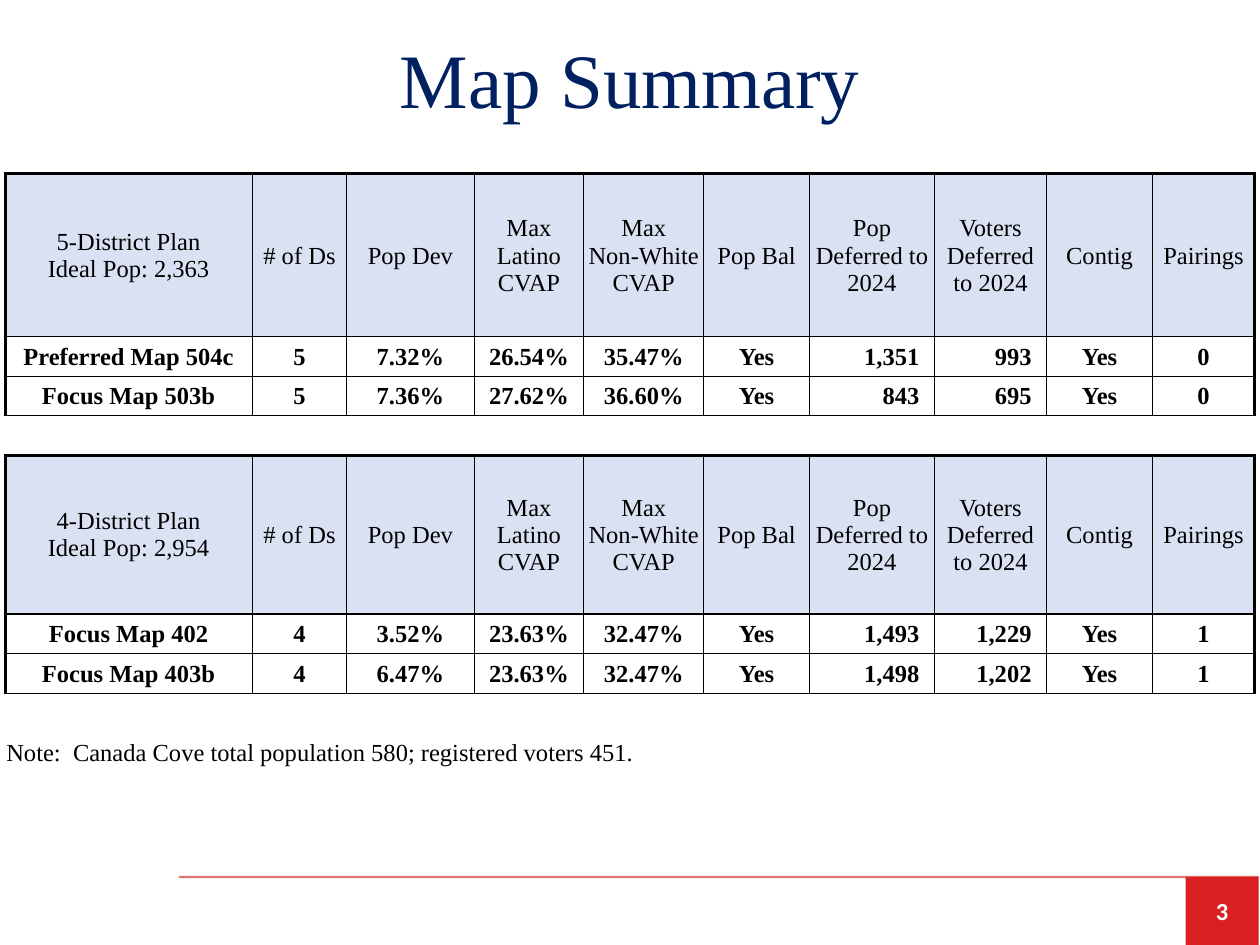
from lxml import etree
from pptx import Presentation
from pptx.dml.color import RGBColor
from pptx.enum.shapes import MSO_CONNECTOR, MSO_SHAPE
from pptx.enum.text import MSO_ANCHOR as Anchor, PP_ALIGN as Align
from pptx.oxml import parse_xml
from pptx.oxml.ns import nsdecls, qn
from pptx.util import Inches, Pt

WIDTH, HEIGHT = 10, 7.5
SERIF = "Times New Roman"
BLACK, NAVY, WHITE = "000000", "002060", "FFFFFF"
HEADER_FILL, BADGE_RED, RULE_RED = "D9E1F2", "D92121", "C80000"
THIN, MEDIUM, THICK = 0.5, 1, 2

COLUMNS = [1.96, 0.75, 1.01, 0.87, 0.95, 0.84, 0.99, 0.89, 0.84, 0.81]
NUMBER_COLUMNS = (6, 7)
HEADINGS = ["# of Ds", "Pop Dev", "Max\vLatino\vCVAP", "Max\vNon-White\vCVAP",
            "Pop Bal", "Pop\vDeferred to 2024", "Voters\vDeferred\vto 2024",
            "Contig", "Pairings"]
# Each plan: corner label, heading height, maps
PLANS = [
    ("5-District Plan\vIdeal Pop: 2,363", 1.29, [
        ["Preferred Map 504c", "5", "7.32%", "26.54%", "35.47%", "Yes",
         "1,351", "993", "Yes", "0"],
        ["Focus Map 503b", "5", "7.36%", "27.62%", "36.60%", "Yes",
         "843", "695", "Yes", "0"]]),
    ("4-District Plan\vIdeal Pop: 2,954", 1.26, [
        ["Focus Map 402", "4", "3.52%", "23.63%", "32.47%", "Yes",
         "1,493", "1,229", "Yes", "1"],
        ["Focus Map 403b", "4", "6.47%", "23.63%", "32.47%", "Yes",
         "1,498", "1,202", "Yes", "1"]]),
]
NOTE = "Note:  Canada Cove total population 580; registered voters 451."


def color(value):
    return RGBColor.from_string(value)


def style(paragraph, size, font_color, name=SERIF, bold=False, align=Align.CENTER):
    paragraph.alignment = align
    font = paragraph.font
    font.name, font.size, font.bold = name, Pt(size), bold
    font.color.rgb = color(font_color)


def set_borders(cell, left=0, right=0, top=0, bottom=0):
    """Draw the four sides of a cell; a width of zero hides the side."""
    properties = cell._tc.get_or_add_tcPr()
    for index, (side, width) in enumerate(zip("LRTB", (left, right, top, bottom))):
        paint = (f'<a:solidFill><a:srgbClr val="{BLACK}"/></a:solidFill>'
                 if width else "<a:noFill/>")
        properties.insert(index, parse_xml(
            f'<a:ln{side} {nsdecls("a")} w="{Pt(width)}">{paint}</a:ln{side}>'))


def fill_cell(cell, text="", fill=None, bold=False, align=Align.CENTER, right=0.01):
    cell.text = text
    cell.vertical_anchor = Anchor.MIDDLE
    cell.margin_left = cell.margin_top = Inches(0.01)
    cell.margin_right, cell.margin_bottom = Inches(right), 0
    style(cell.text_frame.paragraphs[0], 14, BLACK, bold=bold, align=align)
    if fill:
        cell.fill.solid()
        cell.fill.fore_color.rgb = color(fill)
    else:
        cell.fill.background()


def add_title(slide, left, top, width, height):
    box = slide.shapes.add_textbox(*map(Inches, (left, top, width, height)))
    frame = box.text_frame
    frame.word_wrap = True
    frame.vertical_anchor = Anchor.MIDDLE
    frame.text = "Map Summary"
    style(frame.paragraphs[0], 44, NAVY)


def add_plan(table, first_row, label, maps):
    """Fill a heading row, its map rows and the empty row below."""
    last = len(COLUMNS) - 1
    for offset, values in enumerate([[label] + HEADINGS] + maps):
        heading = offset == 0
        for column, value in enumerate(values):
            cell = table.cell(first_row + offset, column)
            number = column in NUMBER_COLUMNS and not heading
            fill_cell(cell, value, HEADER_FILL if heading else None, not heading,
                      Align.RIGHT if number else Align.CENTER,
                      0.12 if number else 0.01)
            set_borders(cell,
                        left=THICK if column == 0 else THIN,
                        right=THICK if column == last else THIN,
                        top=THICK if heading else MEDIUM if offset == 1 else THIN,
                        bottom=MEDIUM if heading else THIN)


def add_spacer(table, row, bottom):
    for cell in table.rows[row].cells:
        fill_cell(cell)
        set_borders(cell, top=THIN, bottom=bottom)


def add_summary_table(slide, left, top, width, height):
    block = 4  # heading, two maps, spacer
    row_count = block * len(PLANS) + 1
    table = slide.shapes.add_table(
        row_count, len(COLUMNS), *map(Inches, (left, top, width, height))).table
    table.first_row = table.horz_banding = False

    # Grid: columns share the width, plain rows share what the headings leave
    for column, share in zip(table.columns, COLUMNS):
        column.width = Inches(width * share / sum(COLUMNS))
    heading_total = sum(plan[1] for plan in PLANS)
    for row in table.rows:
        row.height = Inches((height - heading_total) / (row_count - len(PLANS)))

    for index, (label, heading_height, maps) in enumerate(PLANS):
        first_row = index * block
        table.rows[first_row].height = Inches(heading_height)
        add_plan(table, first_row, label, maps)
        is_last = index == len(PLANS) - 1
        add_spacer(table, first_row + block - 1, 0 if is_last else THICK)

    # Note across the full width
    for cell in table.rows[row_count - 1].cells:
        fill_cell(cell)
        set_borders(cell)
    note = table.cell(row_count - 1, 0)
    note.merge(table.cell(row_count - 1, len(COLUMNS) - 1))
    fill_cell(note, NOTE, align=Align.LEFT)


def add_footer(slide, left, top, width, height):
    right, badge_width = left + width, 0.58

    # Translucent rule
    rule = slide.shapes.add_connector(
        MSO_CONNECTOR.STRAIGHT, *map(Inches, (left, top, right, top)))
    rule.line.width = Pt(1.25)
    rule.line.color.rgb = color(RULE_RED)
    properties = rule._element.spPr
    swatch = next(properties.iter(qn("a:srgbClr")))
    etree.SubElement(swatch, qn("a:alpha")).set("val", "55000")
    etree.SubElement(properties, qn("a:effectLst"))

    # Page number
    badge = slide.shapes.add_shape(
        MSO_SHAPE.RECTANGLE,
        *map(Inches, (right - badge_width, top, badge_width, height)))
    badge.shadow.inherit = False
    badge.fill.solid()
    badge.fill.fore_color.rgb = color(BADGE_RED)
    badge.line.fill.background()
    frame = badge.text_frame
    frame.vertical_anchor = Anchor.MIDDLE
    frame.text = "3"
    style(frame.paragraphs[0], 14, WHITE, name="Calibri", bold=True)


def main():
    presentation = Presentation()
    presentation.slide_width, presentation.slide_height = Inches(WIDTH), Inches(HEIGHT)
    slide = presentation.slides.add_slide(presentation.slide_layouts[6])
    add_footer(slide, 1.42, 6.96, 8.57, HEIGHT - 6.96)
    add_summary_table(slide, 0.04, 1.38, WIDTH - 2 * 0.04, 4.75)
    add_title(slide, 0, 0.12, WIDTH, 1)
    presentation.save("out.pptx")


if __name__ == "__main__":
    main()
